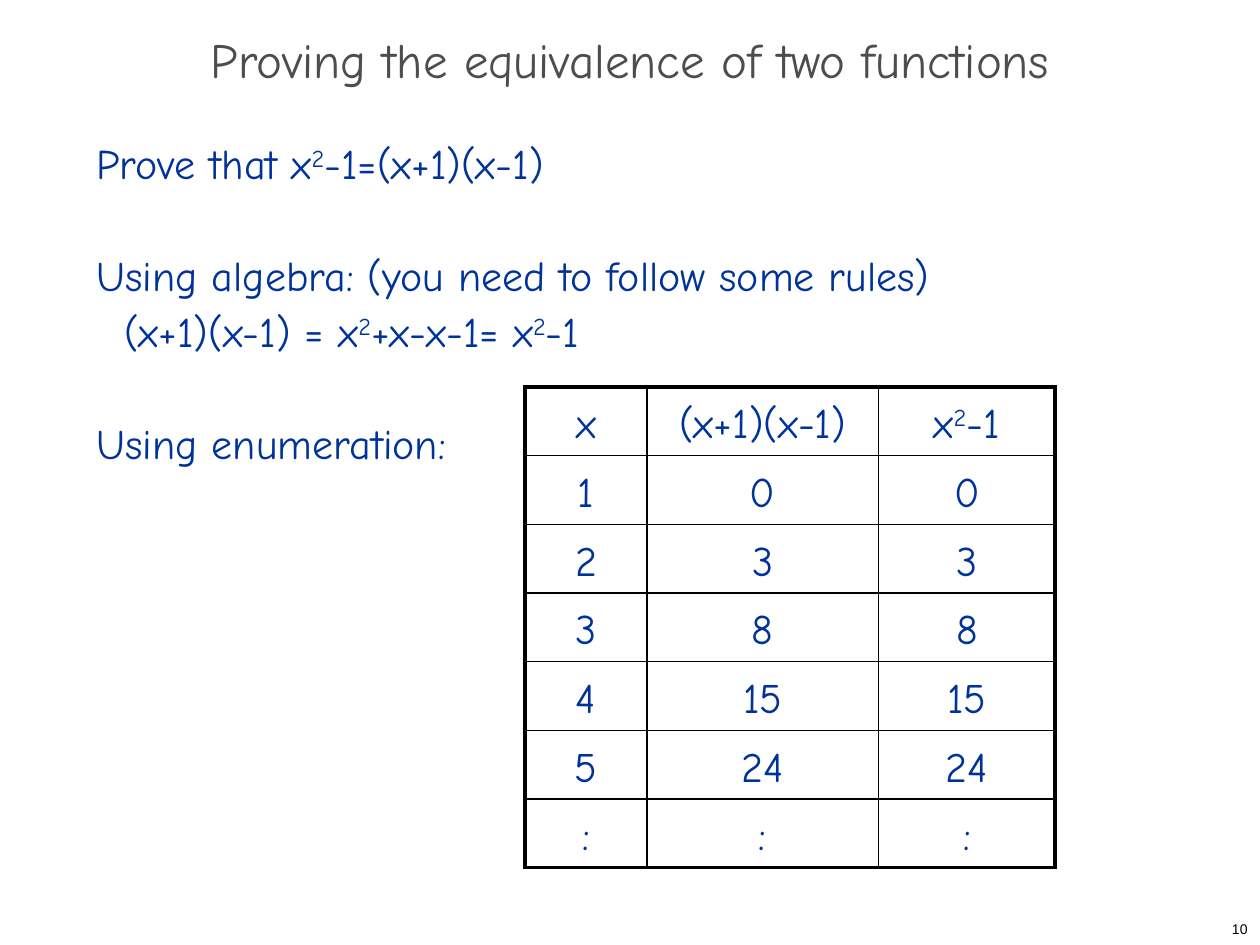
from dataclasses import dataclass

from lxml.etree import SubElement
from pptx import Presentation
from pptx.dml.color import RGBColor
from pptx.enum.text import MSO_ANCHOR as Anchor, PP_ALIGN as Align
from pptx.oxml.ns import qn
from pptx.util import Pt


@dataclass(frozen=True)
class Theme:
    hand: str = "Comic Neue"
    plain: str = "Arial"
    heading: str = "4D4D4D"
    ink: str = "003399"
    black: str = "000000"
    title_size: float = 28
    body_size: float = 24
    number_size: float = 8
    leading: float = 32
    outer_line: float = 2.25
    inner_line: float = 1


THEME = Theme()


def write(paragraph, text, *, size=THEME.body_size, font=THEME.hand, color=THEME.ink,
          align=Align.LEFT, leading=Pt(THEME.leading), before=0, indent=0):
    """Fill a paragraph; the character after each ^ is raised."""
    paragraph.alignment = align
    paragraph.line_spacing = leading
    paragraph.space_before = Pt(before)
    if indent:
        properties = paragraph._p.get_or_add_pPr()
        properties.set("marL", str(Pt(indent)))
        properties.set("indent", "0")

    first, *rest = text.split("^")
    pieces = [(first, False)]
    for part in rest:
        pieces += [(part[0], True), (part[1:], False)]
    for piece, raised in pieces:
        if not piece:
            continue
        run = paragraph.add_run()
        run.text = piece
        run.font.size = Pt(size)
        run.font.name = font
        run.font.color.rgb = RGBColor.from_string(color)
        if raised:
            run._r.get_or_add_rPr().set("baseline", "30000")


def add_frame(slide, box, anchor=Anchor.TOP):
    frame = slide.shapes.add_textbox(*map(Pt, box)).text_frame
    frame.word_wrap = True
    frame.vertical_anchor = anchor
    return frame


def add_title(slide, box, title):
    frame = add_frame(slide, box, Anchor.MIDDLE)
    write(frame.paragraphs[0], title, size=THEME.title_size, color=THEME.heading,
          align=Align.CENTER, leading=0.7)


def add_argument(slide, box, lines):
    frame = add_frame(slide, box)
    for index, (text, spacing) in enumerate(lines):
        paragraph = frame.add_paragraph() if index else frame.paragraphs[0]
        write(paragraph, text, **spacing)


def add_page_number(slide, box, number):
    frame = add_frame(slide, box, Anchor.MIDDLE)
    write(frame.paragraphs[0], number, size=THEME.number_size, font=THEME.plain,
          color=THEME.black, align=Align.RIGHT, leading=1.0)


def set_borders(cell, outer_sides):
    properties = cell._tc.get_or_add_tcPr()
    # Borders come before the fill in the cell properties
    for position, (side, is_outer) in enumerate(outer_sides.items()):
        width = THEME.outer_line if is_outer else THEME.inner_line
        line = SubElement(properties, qn(f"a:ln{side}"), w=str(Pt(width)))
        fill = SubElement(line, qn("a:solidFill"))
        SubElement(fill, qn("a:srgbClr"), val=THEME.black)
        properties.insert(position, line)


def add_enumeration(slide, box, column_widths, rows):
    row_count, column_count = len(rows), len(column_widths)
    table = slide.shapes.add_table(row_count, column_count, *map(Pt, box)).table
    table.first_row = table.horz_banding = False
    for column, width in zip(table.columns, column_widths):
        column.width = Pt(width)
    for r, values in enumerate(rows):
        table.rows[r].height = Pt(box[3] / row_count)
        for c, value in enumerate(values):
            cell = table.cell(r, c)
            cell.fill.background()
            write(cell.text_frame.paragraphs[0], value, align=Align.CENTER)
            set_borders(cell, {"L": c == 0, "R": c == column_count - 1,
                               "T": r == 0, "B": r == row_count - 1})


def main():
    deck = Presentation()
    deck.slide_width, deck.slide_height = Pt(720), Pt(540)
    slide = deck.slides.add_slide(deck.slide_layouts[6])

    # Page number and title
    add_page_number(slide, (570, 522, 150, 18), "10")
    add_title(slide, (0, 12, 720, 52), "Proving the equivalence of two functions")

    # Claim and its two proofs, one line of space between them
    gap = {"before": THEME.leading}
    add_argument(slide, (48, 72, 612, 426), [
        ("Prove that x^2-1=(x+1)(x-1)", {}),
        ("Using algebra: (you need to follow some rules)", gap),
        ("(x+1)(x-1) = x^2+x-x-1= x^2-1", {"indent": 16}),
        ("Using enumeration:", gap),
    ])

    # Both functions evaluated for the first values of x
    header = ("x", "(x+1)(x-1)", "x^2-1")
    values = [(str(x), str((x + 1) * (x - 1)), str(x ** 2 - 1)) for x in range(1, 6)]
    add_enumeration(slide, (300, 221.2, 303, 274.4), (69.8, 132.2, 101),
                    [header, *values, (":", ":", ":")])

    deck.save("out.pptx")


if __name__ == "__main__":
    main()
